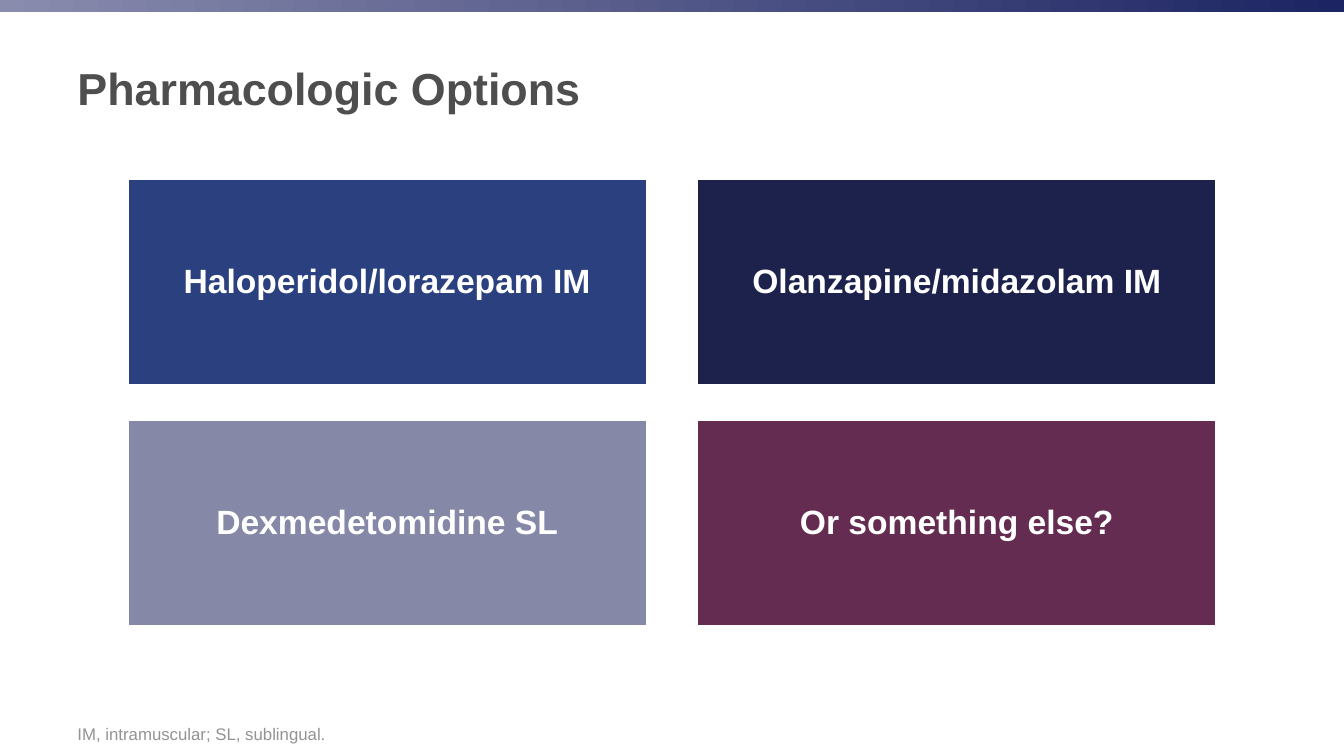
from pptx import Presentation
from pptx.dml.color import RGBColor
from pptx.enum.shapes import MSO_SHAPE as SHAPE
from pptx.enum.text import MSO_ANCHOR as ANCHOR, PP_ALIGN as ALIGN
from pptx.util import Inches, Pt

COLORS = {
    "white": "FFFFFF",
    "title": "4D4E4D",
    "note": "939393",
    "bar_start": "898CAD",
    "bar_end": "1C2463",
    "blue": "2B407E",
    "navy": "1D224C",
    "lavender": "8589A7",
    "plum": "642C50",
}
OPTIONS = [
    ("Haloperidol/lorazepam IM", "blue"),
    ("Olanzapine/midazolam IM", "navy"),
    ("Dexmedetomidine SL", "lavender"),
    ("Or something else?", "plum"),
]


class SlideBuilder:
    """Adds styled elements to the current slide."""

    font = "Arial"

    def __init__(self, slide):
        self.slide = slide

    def color(self, name):
        return RGBColor.from_string(COLORS[name])

    def style_text(self, sp, text, size, color, bold, anchor, inset_y=0.05):
        tf = sp.text_frame
        tf.word_wrap = True
        tf.vertical_anchor = anchor
        tf.margin_left = tf.margin_right = Inches(0.1)
        tf.margin_top = tf.margin_bottom = Inches(inset_y)
        tf.text = text
        p = tf.paragraphs[0]
        font = p.runs[0].font
        font.name = self.font
        font.size = Pt(size)
        font.bold = bold
        font.color.rgb = self.color(color)
        return p

    def rectangle(self, x, y, w, h):
        sp = self.slide.shapes.add_shape(
            SHAPE.RECTANGLE, Inches(x), Inches(y), Inches(w), Inches(h))
        sp.shadow.inherit = False
        return sp

    def gradient_bar(self, x, y, w, h, *stops):
        sp = self.rectangle(x, y, w, h)
        sp.line.fill.background()
        sp.fill.gradient()
        sp.fill.gradient_angle = 0
        for stop, name in zip(sp.fill.gradient_stops, stops):
            stop.color.rgb = self.color(name)

    def text_box(self, x, y, w, h, text, size, color, anchor, bold=False):
        sp = self.slide.shapes.add_textbox(
            Inches(x), Inches(y), Inches(w), Inches(h))
        self.style_text(sp, text, size, color, bold, anchor)

    def option_tile(self, x, y, w, h, text, fill):
        sp = self.rectangle(x, y, w, h)
        sp.fill.solid()
        sp.fill.fore_color.rgb = self.color(fill)
        sp.line.color.rgb = self.color("white")
        sp.line.width = Pt(1)
        p = self.style_text(sp, text, 24, "white", True, ANCHOR.MIDDLE, 0.1)
        p.alignment = ALIGN.CENTER
        p.line_spacing = 0.9


def main():
    prs = Presentation()
    prs.slide_width, prs.slide_height = Inches(13.33), Inches(7.5)
    s = SlideBuilder(prs.slides.add_slide(prs.slide_layouts[6]))

    s.gradient_bar(0, 0, 13.33, 0.12, "bar_start", "bar_end")
    s.text_box(0.67, 6.95, 11.75, 0.48, "IM, intramuscular; SL, sublingual.",
               12, "note", ANCHOR.BOTTOM)
    s.text_box(0.67, 0.22, 11.75, 1.3, "Pharmacologic Options",
               32, "title", ANCHOR.MIDDLE, bold=True)
    for i, (text, fill) in enumerate(OPTIONS):
        row, col = divmod(i, 2)
        s.option_tile(1.27 + col * 5.65, 1.78 + row * 2.39, 5.14, 2.04,
                      text, fill)

    prs.save("out.pptx")


if __name__ == "__main__":
    main()
